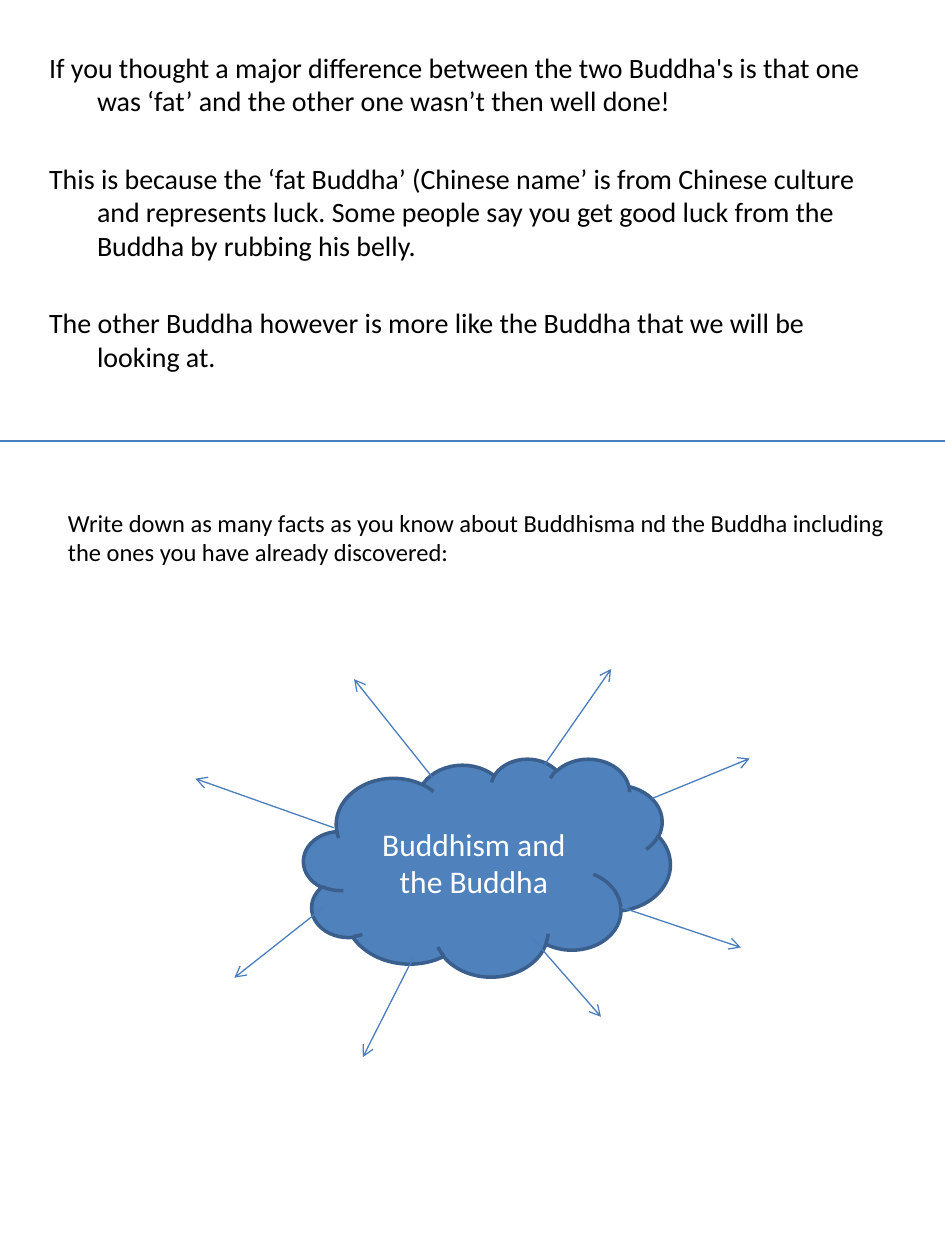
from dataclasses import dataclass
from typing import NamedTuple

from lxml import etree
from pptx import Presentation
from pptx.dml.color import RGBColor
from pptx.enum.shapes import MSO_CONNECTOR, MSO_SHAPE
from pptx.enum.text import MSO_ANCHOR, MSO_AUTO_SIZE, PP_ALIGN
from pptx.oxml.ns import qn
from pptx.util import Inches, Pt

STRAIGHT = MSO_CONNECTOR.STRAIGHT
CLOUD = MSO_SHAPE.CLOUD
MIDDLE = MSO_ANCHOR.MIDDLE
NO_AUTOFIT = MSO_AUTO_SIZE.NONE
CENTER = PP_ALIGN.CENTER


@dataclass(frozen=True)
class Theme:
    font: str = "Calibri"
    ink: RGBColor = RGBColor(0, 0, 0)
    white: RGBColor = RGBColor(255, 255, 255)
    cloud_fill: RGBColor = RGBColor(0x4F, 0x81, 0xBD)
    cloud_line: RGBColor = RGBColor(0x3A, 0x5F, 0x8C)
    rule: RGBColor = RGBColor(0x4B, 0x7E, 0xBC)
    body_size: Pt = Pt(16)
    prompt_size: Pt = Pt(14)
    cloud_size: Pt = Pt(18)
    paragraph_gap: Pt = Pt(25)
    rule_width: Pt = Pt(0.75)
    cloud_line_width: Pt = Pt(2)


class Line(NamedTuple):
    x1: float
    y1: float
    x2: float
    y2: float


THEME = Theme()
HANG = Inches(0.38)
EXPLANATION = [
    "If you thought a major difference between the two Buddha's is that one was ‘fat’ "
    "and the other one wasn’t then well done!",
    "This is because the ‘fat Buddha’ (Chinese name’ is from Chinese culture and represents "
    "luck. Some people say you get good luck from the Buddha by rubbing his belly.",
    "The other Buddha however is more like the Buddha that we will be looking at.",
]
PROMPT = ("Write down as many facts as you know about Buddhisma nd the Buddha including "
          "the ones you have already discovered:")
DIVIDER = Line(0, 3.5, 7.5, 3.5)
ARROWS = [
    Line(3.44, 6.18, 2.81, 5.39),
    Line(4.3, 6.1, 4.85, 5.31),
    Line(3.28, 7.6, 2.88, 8.39),
    Line(4.22, 7.44, 4.77, 8.07),
    Line(2.65, 6.57, 1.55, 6.18),
    Line(5.17, 6.34, 5.95, 6.02),
    Line(2.57, 7.2, 1.86, 7.76),
    Line(4.93, 7.2, 5.88, 7.52),
]


def format_runs(paragraph, size: Pt, color: RGBColor) -> None:
    for run in paragraph.runs:
        run.font.name = THEME.font
        run.font.size = size
        run.font.color.rgb = color


def fill_body(body) -> None:
    body.left, body.top = Inches(0.29), Inches(0.35)
    body.width, body.height = Inches(6.75), Inches(2.75)
    text_frame = body.text_frame
    text_frame.text = "\n".join(EXPLANATION)
    text_frame.auto_size = NO_AUTOFIT
    for index, paragraph in enumerate(text_frame.paragraphs):
        properties = paragraph._p.get_or_add_pPr()
        properties.set("marL", str(HANG))
        properties.set("indent", str(-HANG))
        etree.SubElement(properties, qn("a:buNone"))
        paragraph.space_before = THEME.paragraph_gap if index else Pt(0)
        format_runs(paragraph, THEME.body_size, THEME.ink)


def draw_line(slide, line: Line, arrow: bool = False) -> None:
    connector = slide.shapes.add_connector(STRAIGHT, *(Inches(value) for value in line))
    connector.line.color.rgb = THEME.rule
    connector.line.width = THEME.rule_width
    if arrow:
        etree.SubElement(connector.line._get_or_add_ln(), qn("a:tailEnd"), type="arrow")
    etree.SubElement(connector._element.spPr, qn("a:effectLst"))


def draw_cloud(slide) -> None:
    cloud = slide.shapes.add_shape(CLOUD, Inches(2.41), Inches(6.02), Inches(2.91), Inches(1.73))
    cloud.shadow.inherit = False
    cloud.fill.solid()
    cloud.fill.fore_color.rgb = THEME.cloud_fill
    cloud.line.color.rgb = THEME.cloud_line
    cloud.line.width = THEME.cloud_line_width
    text_frame = cloud.text_frame
    text_frame.text = "Buddhism and the Buddha"
    text_frame.word_wrap = True
    text_frame.vertical_anchor = MIDDLE
    paragraph = text_frame.paragraphs[0]
    paragraph.alignment = CENTER
    format_runs(paragraph, THEME.cloud_size, THEME.white)


def draw_prompt(slide) -> None:
    box = slide.shapes.add_textbox(Inches(0.44), Inches(3.98), Inches(6.69), Inches(0.57))
    box.text_frame.word_wrap = True
    box.text_frame.text = PROMPT
    format_runs(box.text_frame.paragraphs[0], THEME.prompt_size, THEME.ink)


def main() -> None:
    presentation = Presentation()
    presentation.slide_width, presentation.slide_height = Inches(7.5), Inches(10)
    slide = presentation.slides.add_slide(presentation.slide_layouts[1])

    # Explanation; this slide has no title
    title = slide.shapes.title._element
    title.getparent().remove(title)
    fill_body(slide.placeholders[1])

    # Mind map
    draw_cloud(slide)
    for arrow in ARROWS:
        draw_line(slide, arrow, arrow=True)

    # Task prompt below the divider
    draw_prompt(slide)
    draw_line(slide, DIVIDER)
    presentation.save("out.pptx")


if __name__ == "__main__":
    main()
